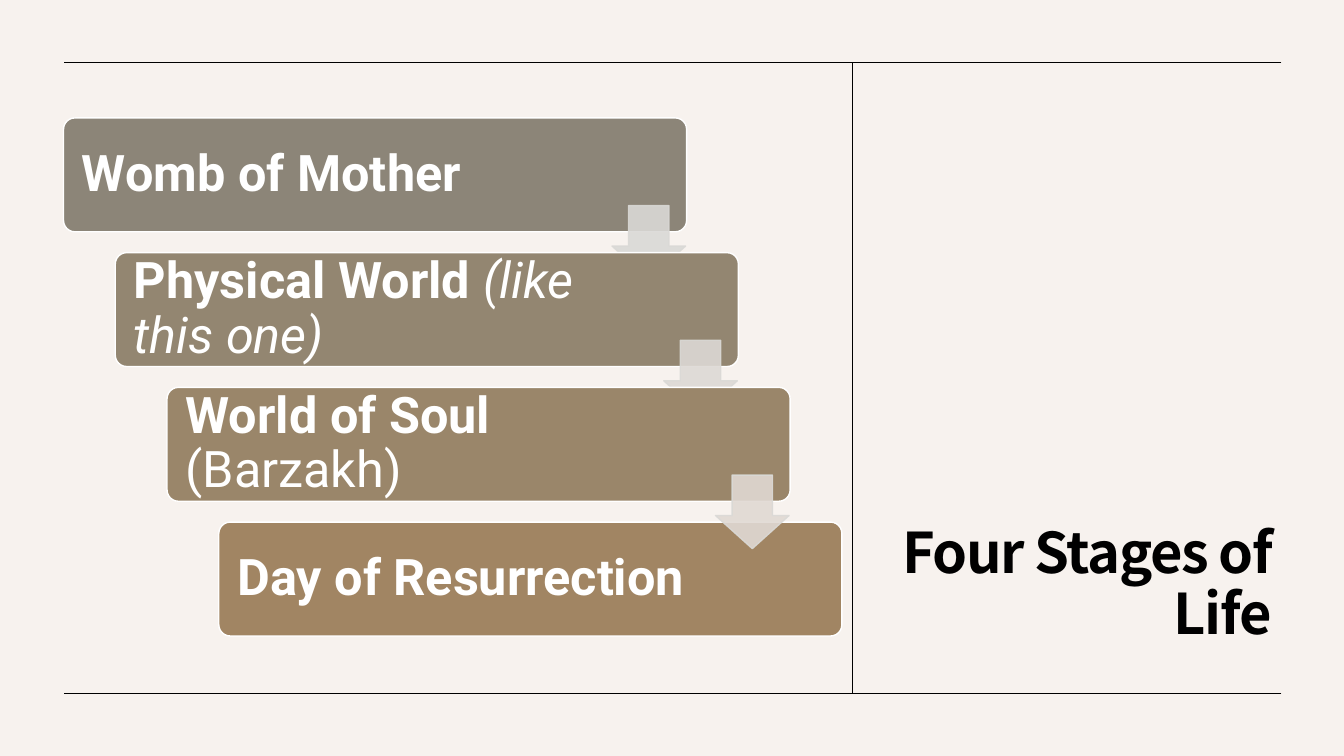
from lxml import etree
from pptx import Presentation
from pptx.dml.color import RGBColor
from pptx.enum.shapes import MSO_CONNECTOR, MSO_SHAPE
from pptx.enum.text import MSO_ANCHOR as ANCHOR, PP_ALIGN as ALIGN
from pptx.oxml.ns import qn
from pptx.util import Inches, Pt

PAPER = RGBColor(0xF7, 0xF2, 0xEE)
BLACK = RGBColor(0x00, 0x00, 0x00)
WHITE = RGBColor(0xFF, 0xFF, 0xFF)
ARROW_LINE = RGBColor(0xDA, 0xD9, 0xD6)

LEFT, RIGHT, TOP, BOTTOM, DIVIDER = 0.63, 12.71, 0.62, 6.88, 8.45
BOX_W, BOX_H = 6.18, 1.13
FIRST_X, FIRST_Y = 0.63, 1.17
STEP_X, STEP_Y = (2.17 - FIRST_X) / 3, (5.18 - FIRST_Y) / 3
ARROW_SIZE, ARROW_DX, ARROW_DY = 0.73, 5.44, 0.87

# Runs (text, bold, italic), box colour, colour of the arrow to the next stage
STAGES = [
    ([("Womb of Mother", True, False)],
     RGBColor(0x8C, 0x85, 0x78), RGBColor(0xDA, 0xD9, 0xD6)),
    ([("Physical World ", True, False), ("(like this one)", False, True)],
     RGBColor(0x93, 0x86, 0x71), RGBColor(0xDD, 0xD9, 0xD5)),
    ([("World of Soul ", True, False), ("(Barzakh)", False, False)],
     RGBColor(0x9A, 0x86, 0x6A), RGBColor(0xE0, 0xD9, 0xD3)),
    ([("Day of Resurrection", True, False)],
     RGBColor(0xA1, 0x85, 0x63), None),
]


class StageSlide:
    title_font = "Noto Sans CJK KR"
    body_font = "Roboto"

    def __init__(self, prs):
        self.slide = prs.slides.add_slide(prs.slide_layouts[6])
        self.shapes = self.slide.shapes
        fill = self.slide.background.fill
        fill.solid()
        fill.fore_color.rgb = PAPER

    def add_run(self, p, text, font, size, color, bold, italic=False):
        r = p.add_run()
        r.text = text
        r.font.name = font
        r.font.size = Pt(size)
        r.font.color.rgb = color
        r.font.bold = bold
        r.font.italic = italic
        return r

    def add_rule(self, x1, y1, x2, y2):
        line = self.shapes.add_connector(
            MSO_CONNECTOR.STRAIGHT, Inches(x1), Inches(y1), Inches(x2), Inches(y2))
        line.line.color.rgb = BLACK
        line.line.width = Pt(0.5)
        etree.SubElement(line._element.spPr, qn("a:effectLst"))

    def add_preset(self, kind, x, y, w, h, fill, line, adjustments):
        sp = self.shapes.add_shape(kind, Inches(x), Inches(y), Inches(w), Inches(h))
        sp.shadow.inherit = False
        sp.fill.solid()
        sp.fill.fore_color.rgb = fill
        sp.line.color.rgb = line
        sp.line.width = Pt(1)
        for i, value in enumerate(adjustments):
            sp.adjustments[i] = value
        return sp

    def add_title(self, text):
        tf = self.shapes.add_textbox(
            Inches(8.82), Inches(1.04), Inches(3.89), Inches(5.42)).text_frame
        tf.word_wrap = True
        tf.vertical_anchor = ANCHOR.BOTTOM
        p = tf.paragraphs[0]
        p.alignment = ALIGN.RIGHT
        p.line_spacing = 0.9
        p.space_after = Pt(6)
        r = self.add_run(p, text, self.title_font, 40, BLACK, True)
        r.font._element.set("spc", "-100")

    def add_stage(self, x, y, runs, color):
        sp = self.add_preset(MSO_SHAPE.ROUNDED_RECTANGLE, x, y, BOX_W, BOX_H,
                             color, WHITE, [0.1])
        tf = sp.text_frame
        tf.word_wrap = True
        tf.vertical_anchor = ANCHOR.MIDDLE
        tf.margin_left = tf.margin_top = tf.margin_bottom = Inches(0.15)
        tf.margin_right = Inches(1.41)
        p = tf.paragraphs[0]
        p.alignment = ALIGN.LEFT
        p.line_spacing = 0.9
        for text, bold, italic in runs:
            self.add_run(p, text, self.body_font, 36, WHITE, bold, italic)

    def add_arrow(self, x, y, color):
        """Add a down arrow whose fill and outline are 90% opaque."""
        sp = self.add_preset(MSO_SHAPE.DOWN_ARROW, x, y, ARROW_SIZE, ARROW_SIZE,
                             color, ARROW_LINE, [0.55, 0.45])
        for clr in sp._element.spPr.iter(qn("a:srgbClr")):
            etree.SubElement(clr, qn("a:alpha")).set("val", "90000")


def main():
    prs = Presentation()
    prs.slide_width, prs.slide_height = Inches(13.33), Inches(7.5)
    s = StageSlide(prs)
    s.add_title("Four Stages of Life")
    s.add_rule(RIGHT, BOTTOM, LEFT, BOTTOM)
    s.add_rule(DIVIDER, TOP, DIVIDER, BOTTOM)
    s.add_rule(RIGHT, TOP, LEFT, TOP)

    # The last stage lies behind the arrow that points to it
    for i in (3, 0, 1, 2):
        runs, color, arrow_color = STAGES[i]
        x, y = FIRST_X + i * STEP_X, FIRST_Y + i * STEP_Y
        s.add_stage(x, y, runs, color)
        if arrow_color is not None:
            s.add_arrow(x + ARROW_DX, y + ARROW_DY, arrow_color)
    prs.save("out.pptx")


if __name__ == "__main__":
    main()
